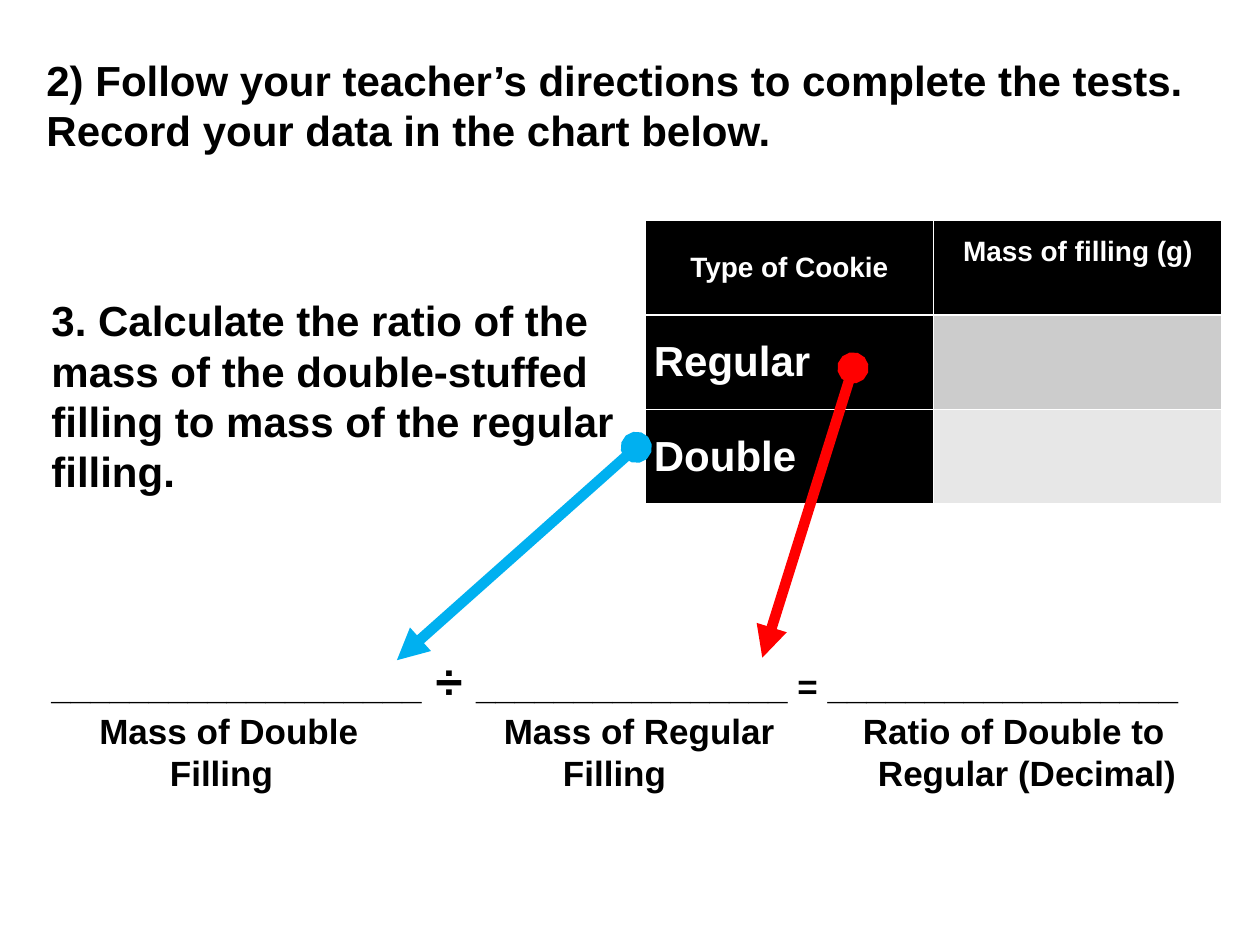
from dataclasses import dataclass

from lxml.etree import SubElement
from pptx import Presentation
from pptx.dml.color import RGBColor as Color
from pptx.enum.shapes import MSO_CONNECTOR as Connector
from pptx.enum.text import MSO_ANCHOR as Anchor, PP_ALIGN as Align
from pptx.oxml import parse_xml
from pptx.oxml.ns import nsdecls, qn
from pptx.util import Inches, Pt


@dataclass(frozen=True)
class Theme:
    font: str = "Arial"
    ink: str = "000000"
    paper: str = "FFFFFF"
    bands: tuple = ("CCCCCC", "E7E7E7")
    regular: str = "FF0000"
    double: str = "00B0F0"
    body: int = 24
    formula: int = 20
    operator: int = 28
    header: int = 16
    arrow: int = 6
    leading: float = 1.2


class Worksheet:
    """Draws worksheet elements on one slide in a shared style."""

    def __init__(self, page, theme):
        self.page = page
        self.theme = theme

    def style(self, para, size, color):
        font = para.font
        font.name = self.theme.font
        font.size = Pt(size)
        font.bold = True
        font.color.rgb = Color.from_string(color)

    def text(self, left, top, width, height, lines, size):
        box = self.page.shapes.add_textbox(*map(Inches, (left, top, width, height)))
        frame = box.text_frame
        frame.word_wrap = True
        for index, (parts, stops) in enumerate(lines):
            para = frame.paragraphs[0] if index == 0 else frame.add_paragraph()
            para.line_spacing = Pt(size * self.theme.leading)
            self.style(para, size, self.theme.ink)
            for words, run_size in parts:
                span = para.add_run()
                span.text = words
                if run_size != size:
                    span.font.size = Pt(run_size)
            if stops:
                self.tabs(para, stops)

    def tabs(self, para, stops):
        tab_list = parse_xml(f"<a:tabLst {nsdecls('a')}/>")
        for stop in stops:
            SubElement(tab_list, qn("a:tab"), pos=str(Inches(stop)), algn="l")
        para.font
        para._p.pPr.find(qn("a:defRPr")).addprevious(tab_list)

    def cell(self, cell, fill, words="", size=None, align=Align.LEFT, bottom=0):
        cell.fill.solid()
        cell.fill.fore_color.rgb = Color.from_string(fill)
        cell.vertical_anchor = Anchor.MIDDLE
        cell.margin_left = cell.margin_right = Inches(0.07)
        cell.margin_top = 0
        cell.margin_bottom = Inches(bottom)
        cell.text = words
        para = cell.text_frame.paragraphs[0]
        para.alignment = align
        self.style(para, size or self.theme.body, self.theme.paper)

    def table(self, left, top, column_width, row_height, headers, labels):
        theme = self.theme
        columns, rows = len(headers), len(labels) + 1
        table = self.page.shapes.add_table(
            rows, columns, Inches(left), Inches(top),
            Inches(column_width * columns), Inches(row_height * rows),
        ).table
        table.first_col = True
        table.horz_banding = False
        for column, (words, bottom) in enumerate(headers):
            self.cell(table.cell(0, column), theme.ink, words, theme.header,
                      Align.CENTER, bottom)
        for row, (label, band) in enumerate(zip(labels, theme.bands), start=1):
            self.cell(table.cell(row, 0), theme.ink, label)
            self.cell(table.cell(row, 1), band)

    def arrow(self, start, end, color):
        line = self.page.shapes.add_connector(
            Connector.STRAIGHT, *map(Inches, (*start, *end)))
        line.line.color.rgb = Color.from_string(color)
        line.line.width = Pt(self.theme.arrow)
        outline = line.line._get_or_add_ln()
        SubElement(outline, qn("a:headEnd"), type="oval")
        SubElement(outline, qn("a:tailEnd"), type="triangle")
        SubElement(line._element.spPr, qn("a:effectLst"))


def main():
    theme = Theme()
    deck = Presentation()
    deck.slide_width, deck.slide_height = Inches(10), Inches(7.5)
    sheet = Worksheet(deck.slides.add_slide(deck.slide_layouts[6]), theme)

    directions = ("2) Follow your teacher’s directions to complete the tests. "
                  " Record your data in the chart below.")
    question = ("3. Calculate the ratio of the mass of the double-stuffed "
                "filling to mass of the regular filling.")
    formula = [
        ("_" * 19, theme.formula),
        (" ÷ ", theme.operator),
        ("_" * 16 + " = " + "_" * 18, theme.formula),
    ]
    captions = [
        (("Mass of Double", "Mass of Regular", "Ratio of Double to"),
         (0.38, 3.59, 6.44)),
        (("Filling", "Filling", "Regular (Decimal)"), (0.94, 4.06, 6.56)),
    ]
    caption_lines = [
        ([("".join("\t" + word for word in words), theme.formula)], stops)
        for words, stops in captions
    ]

    sheet.text(0.27, 0.38, 9.31, 0.91, [([(directions, theme.body)], ())], theme.body)
    sheet.table(5.12, 1.75, 2.29, 0.75,
                [("Type of Cookie", 0), ("Mass of filling (g)", 0.25)],
                ["Regular", "Double"])
    sheet.text(0.31, 5.25, 9.62, 1.1, [(formula, ()), *caption_lines], theme.formula)
    sheet.text(0.31, 2.29, 4.71, 1.72, [([(question, theme.body)], ())], theme.body)
    sheet.arrow((6.77, 2.92), (6.05, 5.22), theme.regular)
    sheet.arrow((5.05, 3.55), (3.15, 5.24), theme.double)
    deck.save("out.pptx")


if __name__ == "__main__":
    main()
